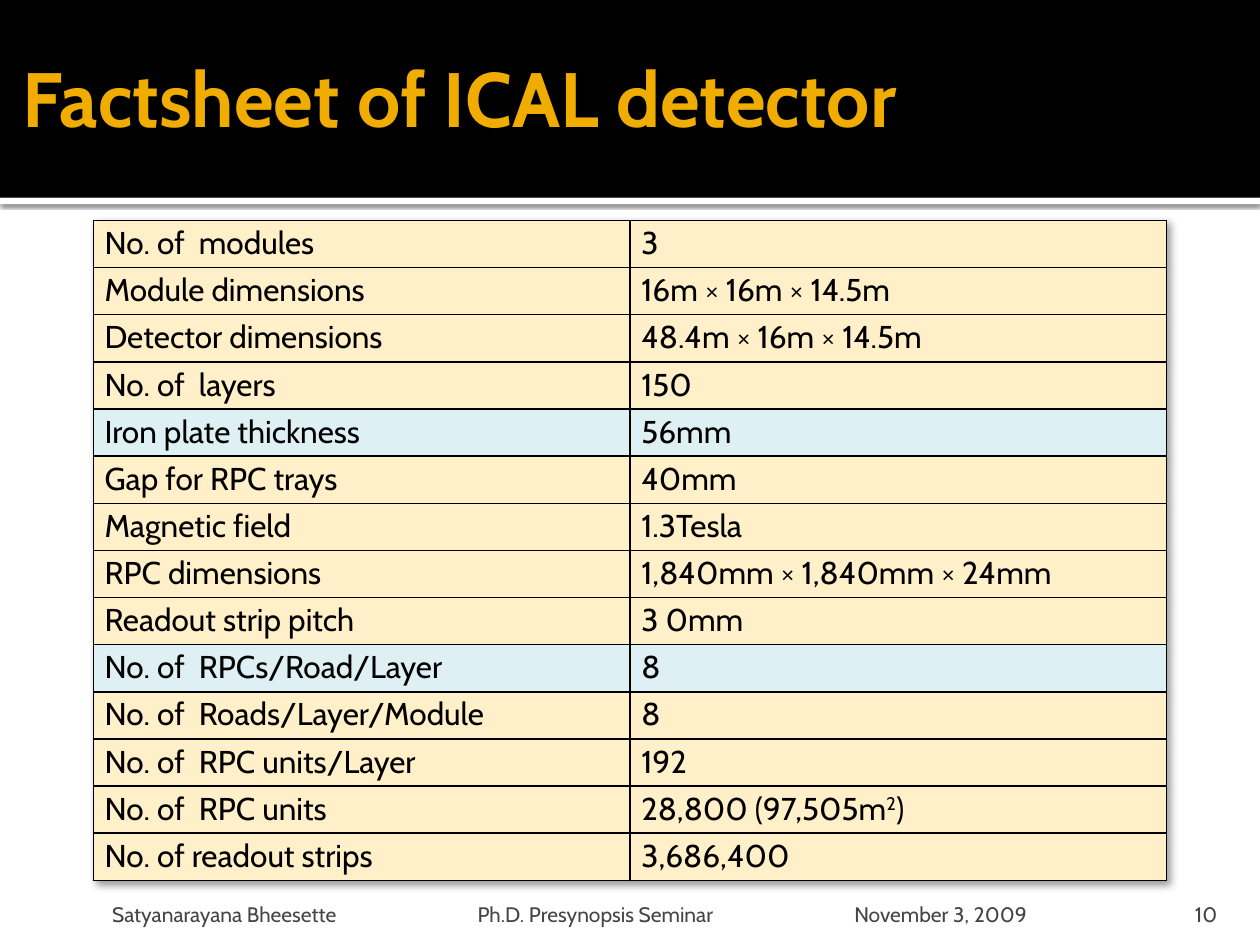
from typing import NamedTuple

from lxml import etree
from pptx import Presentation
from pptx.dml.color import RGBColor
from pptx.enum.shapes import MSO_SHAPE
from pptx.enum.text import MSO_ANCHOR, PP_ALIGN
from pptx.oxml.ns import qn
from pptx.util import Inches, Pt

RECTANGLE = MSO_SHAPE.RECTANGLE
MIDDLE = MSO_ANCHOR.MIDDLE
LEFT, RIGHT = PP_ALIGN.LEFT, PP_ALIGN.RIGHT

BLACK = RGBColor(0x00, 0x00, 0x00)
WHITE = RGBColor(0xFF, 0xFF, 0xFF)
AMBER = RGBColor(0xF0, 0xAD, 0x00)
GREY = RGBColor(0x45, 0x45, 0x45)
CREAM = RGBColor(0xFF, 0xF0, 0xC9)
PALE_BLUE = RGBColor(0xDF, 0xF0, 0xF5)

FONT = "Cabin"
TITLE_FORMAT = {"name": FONT, "size": Pt(44), "bold": True}
CELL_FORMAT = {"name": FONT, "size": Pt(18), "bold": False}
FOOTER_FORMAT = {"name": FONT, "size": Pt(12), "bold": False}
CELL_MARGINS = {
    "margin_left": Inches(0.09), "margin_right": Inches(0.09),
    "margin_top": Inches(0.03), "margin_bottom": Inches(0.03),
}
TABLE_WIDTH, TABLE_HEIGHT = 8.52, 5.24
FOOTER_TABS = (2.9, 5.89)


class Fact(NamedTuple):
    label: str
    value: str
    fill: RGBColor = CREAM


class Label(NamedTuple):
    text: str
    left: float
    top: float
    width: float
    height: float
    insets: tuple[float, float, float, float]
    style: dict
    color: RGBColor
    align: PP_ALIGN = LEFT
    tabs: tuple[float, ...] = ()


class Shadow(NamedTuple):
    opacity: int
    blur: float
    distance: float
    angle: int


FACTS = [
    Fact("No. of  modules", "3"),
    Fact("Module dimensions", "16m × 16m × 14.5m"),
    Fact("Detector dimensions", "48.4m × 16m × 14.5m"),
    Fact("No. of  layers", "150"),
    Fact("Iron plate thickness", "56mm", PALE_BLUE),
    Fact("Gap for RPC trays", "40mm"),
    Fact("Magnetic field", "1.3Tesla"),
    Fact("RPC dimensions", "1,840mm × 1,840mm × 24mm"),
    Fact("Readout strip pitch", "3 0mm"),
    Fact("No. of  RPCs/Road/Layer", "8", PALE_BLUE),
    Fact("No. of  Roads/Layer/Module", "8"),
    Fact("No. of  RPC units/Layer", "192"),
    Fact("No. of  RPC units", "28,800 (97,505m^2^)"),
    Fact("No. of readout strips", "3,686,400"),
]

LABELS = [
    Label("Factsheet of ICAL detector", 0.08, 0.08, 9.84, 1.38,
          (0.1, 0.05, 0.05, 0.05), TITLE_FORMAT, AMBER),
    Label("Satyanarayana Bheesette\tPh.D. Presynopsis Seminar\tNovember 3, 2009",
          0.2, 7.09, 8.66, 0.28, (0.69, 0.05, 0.05, 0), FOOTER_FORMAT, GREY,
          tabs=FOOTER_TABS),
    Label("10", 8.97, 7.09, 0.79, 0.28, (0.1, 0.05, 0.1, 0),
          FOOTER_FORMAT, GREY, RIGHT),
]


def set_all(target, values: dict) -> None:
    for name, value in values.items():
        setattr(target, name, value)


def write(para, text: str, style: dict, color: RGBColor) -> None:
    """Add text in which ^...^ marks a superscript."""
    for index, part in enumerate(text.split("^")):
        if not part:
            continue
        span = para.add_run()
        span.text = part
        set_all(span.font, style)
        span.font.color.rgb = color
        if index % 2:
            span._r.get_or_add_rPr().set("baseline", "30000")


def add_shadow(effects, shadow: Shadow) -> None:
    outer = etree.SubElement(
        effects, qn("a:outerShdw"), blurRad=str(Pt(shadow.blur)),
        dist=str(Pt(shadow.distance)), dir=str(shadow.angle * 60000),
        algn="tl", rotWithShape="0")
    tint = etree.SubElement(outer, qn("a:srgbClr"), val=str(BLACK))
    etree.SubElement(tint, qn("a:alpha"), val=str(shadow.opacity * 1000))


def add_band(page, top: float, height: float, color: RGBColor):
    band = page.shapes.add_shape(
        RECTANGLE, Inches(0), Inches(top), Inches(10), Inches(height))
    band.shadow.inherit = False
    band.fill.solid()
    band.fill.fore_color.rgb = color
    band.line.fill.background()
    return band


def add_label(page, label: Label) -> None:
    box = page.shapes.add_textbox(
        Inches(label.left), Inches(label.top),
        Inches(label.width), Inches(label.height))
    frame = box.text_frame
    sides = ("margin_left", "margin_top", "margin_right", "margin_bottom")
    set_all(frame, dict(zip(sides, map(Inches, label.insets))))
    set_all(frame, {"word_wrap": True, "vertical_anchor": MIDDLE})
    para = frame.paragraphs[0]
    para.alignment = label.align
    if label.tabs:
        stops = etree.SubElement(para._p.get_or_add_pPr(), qn("a:tabLst"))
        for position in label.tabs:
            etree.SubElement(stops, qn("a:tab"),
                             pos=str(Inches(position)), algn="l")
    write(para, label.text, label.style, label.color)


def add_borders(cell) -> None:
    properties = cell._tc.get_or_add_tcPr()
    for index, side in enumerate(("a:lnL", "a:lnR", "a:lnT", "a:lnB")):
        line = etree.Element(qn(side), w=str(Pt(1)))
        fill = etree.SubElement(line, qn("a:solidFill"))
        etree.SubElement(fill, qn("a:srgbClr"), val=str(BLACK))
        properties.insert(index, line)


def add_fact_table(page, facts: list[Fact]) -> None:
    table = page.shapes.add_table(
        len(facts), 2, Inches(0.74), Inches(1.75),
        Inches(TABLE_WIDTH), Inches(TABLE_HEIGHT)).table
    set_all(table, {"first_row": False, "horz_banding": False})
    effects = etree.Element(qn("a:effectLst"))
    table._tbl.tblPr.insert(0, effects)
    add_shadow(effects, Shadow(opacity=40, blur=4, distance=3, angle=45))
    for row, fact in enumerate(facts):
        table.rows[row].height = Inches(TABLE_HEIGHT / len(facts))
        for column, text in enumerate((fact.label, fact.value)):
            cell = table.cell(row, column)
            set_all(cell, CELL_MARGINS)
            cell.fill.solid()
            cell.fill.fore_color.rgb = fact.fill
            add_borders(cell)
            write(cell.text_frame.paragraphs[0], text, CELL_FORMAT, BLACK)


def main() -> None:
    deck = Presentation()
    deck.slide_width, deck.slide_height = Inches(10), Inches(7.5)
    page = deck.slides.add_slide(deck.slide_layouts[6])
    rule = add_band(page, 1.57, 0.05, WHITE)
    add_shadow(rule._element.spPr.find(qn("a:effectLst")),
               Shadow(opacity=60, blur=2.5, distance=0.8, angle=90))
    add_band(page, 0, 1.57, BLACK)
    for label in LABELS:
        add_label(page, label)
    add_fact_table(page, FACTS)
    deck.save("out.pptx")


if __name__ == "__main__":
    main()
